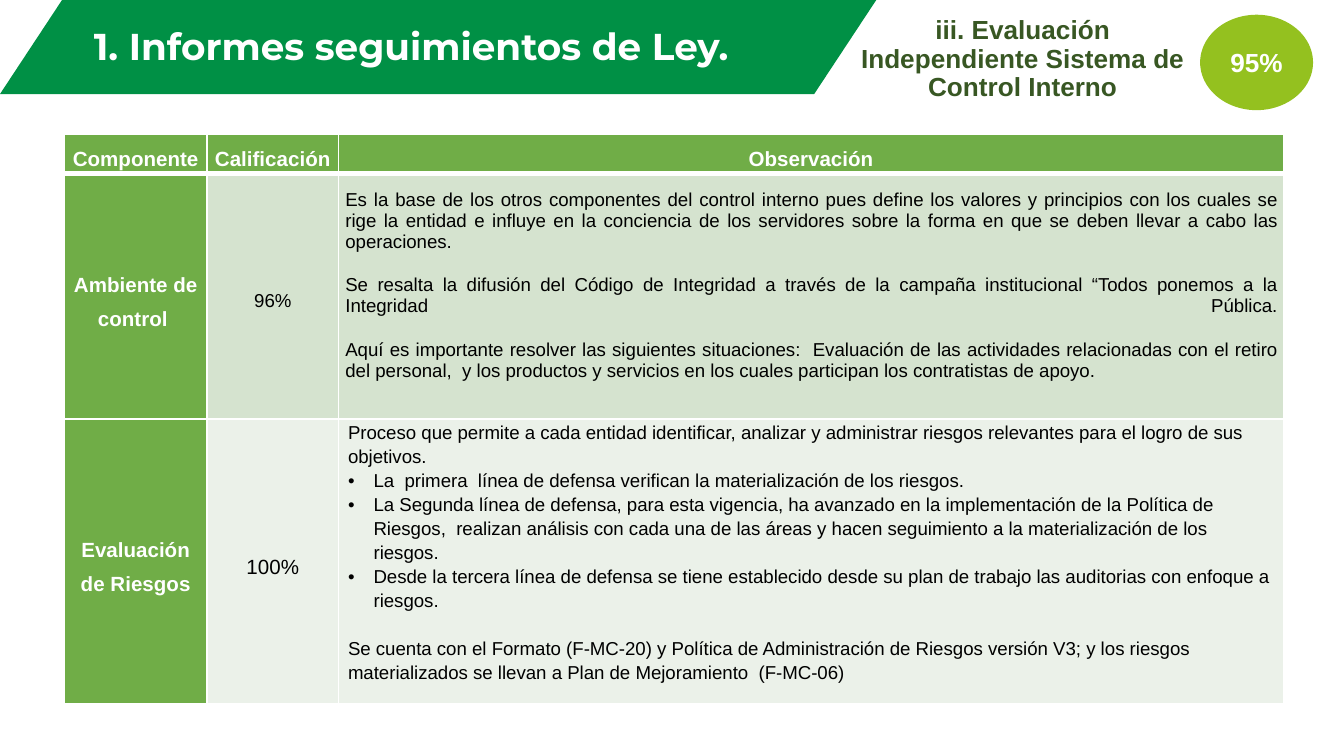
from dataclasses import dataclass, field
from typing import Any

import lxml.etree
import pptx
import pptx.dml.color
import pptx.enum.shapes
import pptx.enum.text
import pptx.oxml.ns
import pptx.util

Inches, Pt = pptx.util.Inches, pptx.util.Pt
Align, Anchor = pptx.enum.text.PP_ALIGN, pptx.enum.text.MSO_ANCHOR
ShapeType = pptx.enum.shapes.MSO_SHAPE
qn = pptx.oxml.ns.qn

WHITE, BLACK = "FFFFFF", "000000"
BANNER, LIME, DARK_GREEN = "009045", "94C11F", "385723"
HEADER, BAND_DARK, BAND_LIGHT = "70AD47", "D5E3CF", "EBF1E9"
HANGING = 0.19
SLIDE_WIDTH = 10


@dataclass
class Style:
    size: float
    color: str = BLACK
    bold: bool = False
    name: str = "Arial"


@dataclass
class Line:
    text: str
    style: Style
    bullet: bool = False
    layout: dict[str, Any] = field(default_factory=dict)


@dataclass
class Cell:
    lines: list[Line]
    fill: str
    anchor: Any = Anchor.MIDDLE
    side: float = 0.05
    bottom: float = 0


def rgb(color: str) -> pptx.dml.color.RGBColor:
    return pptx.dml.color.RGBColor.from_string(color)


def set_attributes(target: Any, values: dict[str, Any]) -> None:
    for name, value in values.items():
        setattr(target, name, value)


def write_lines(text_frame: Any, lines: list[Line]) -> None:
    for index, line in enumerate(lines):
        paragraph = text_frame.paragraphs[0] if index == 0 else text_frame.add_paragraph()
        paragraph.text = line.text
        if line.bullet:
            properties = paragraph._p.get_or_add_pPr()
            properties.set("marL", str(Inches(HANGING)))
            properties.set("indent", str(-Inches(HANGING)))
            lxml.etree.SubElement(properties, qn("a:buFont")).set("typeface", "Arial")
            lxml.etree.SubElement(properties, qn("a:buChar")).set("char", "•")
        set_attributes(paragraph, line.layout)
        style = line.style
        for run in paragraph.runs:
            set_attributes(run.font, {"size": Pt(style.size), "bold": style.bold, "name": style.name})
            run.font.color.rgb = rgb(style.color)
        # Line breaks take the size of the text around them
        for line_break in paragraph._p.findall(qn("a:br")):
            lxml.etree.SubElement(line_break, qn("a:rPr"), sz=str(int(style.size * 100)))


def add_filled_shape(slide: Any, kind: Any, box: tuple[float, ...], color: str) -> Any:
    shape = slide.shapes.add_shape(kind, *map(Inches, box))
    shape.shadow.inherit = False
    shape.fill.solid()
    shape.fill.fore_color.rgb = rgb(color)
    shape.line.fill.background()
    return shape


def add_text(slide: Any, box: tuple[float, ...], line: Line, anchor: Any) -> None:
    text_frame = slide.shapes.add_textbox(*map(Inches, box)).text_frame
    set_attributes(text_frame, {"word_wrap": True, "vertical_anchor": anchor})
    write_lines(text_frame, [line])


def add_border(cell: Any, side: str, width: float) -> None:
    border = lxml.etree.SubElement(cell._tc.get_or_add_tcPr(), qn(f"a:{side}"), w=str(Pt(width)))
    fill = lxml.etree.SubElement(border, qn("a:solidFill"))
    lxml.etree.SubElement(fill, qn("a:srgbClr"), val=WHITE)


def add_grid(slide: Any, left: float, top: float, widths: list[float],
             heights: list[float], rows: list[list[Cell]]) -> None:
    table = slide.shapes.add_table(
        len(rows), len(widths), Inches(left), Inches(top),
        Inches(sum(widths)), Inches(sum(heights))).table
    for column, width in zip(table.columns, widths):
        column.width = Inches(width)
    for row, height in zip(table.rows, heights):
        row.height = Inches(height)
    for row_index, contents in enumerate(rows):
        for column_index, content in enumerate(contents):
            cell = table.cell(row_index, column_index)
            set_attributes(cell, {
                "margin_left": Inches(content.side), "margin_right": Inches(content.side),
                "margin_top": 0, "margin_bottom": Inches(content.bottom),
                "vertical_anchor": content.anchor})
            # The rule under the header row is thicker
            add_border(cell, "lnL", 1)
            add_border(cell, "lnR", 1)
            add_border(cell, "lnT", 3 if row_index == 1 else 1)
            add_border(cell, "lnB", 3 if row_index == 0 else 1)
            cell.fill.solid()
            cell.fill.fore_color.rgb = rgb(content.fill)
            write_lines(cell.text_frame, content.lines)


CENTERED = {"alignment": Align.CENTER, "line_spacing": 1.5}
HEADLINE = {"alignment": Align.CENTER, "line_spacing": 0.9}
LOOSE = {"alignment": Align.LEFT, "line_spacing": 1.15}
BODY = Style(10)


def label(text: str) -> Cell:
    return Cell([Line(text, Style(11, WHITE, True), layout=CENTERED)], HEADER)


def score(text: str, size: float, fill: str) -> Cell:
    return Cell([Line(text, Style(size), layout=CENTERED)], fill)


ENVIRONMENT = "\v\v".join([
    "Es la base de los otros componentes del control interno pues define los valores y principios "
    "con los cuales se rige la entidad e influye en la conciencia de los servidores sobre la forma "
    "en que se deben llevar a cabo las operaciones.",
    "Se resalta la difusión del Código de Integridad a través de la campaña institucional “Todos "
    "ponemos a la Integridad Pública.",
    "Aquí es importante resolver las siguientes situaciones:  Evaluación de las actividades "
    "relacionadas con el retiro del personal,  y los productos y servicios en los cuales participan "
    "los contratistas de apoyo.",
])
RISK_INTRO = ("Proceso que permite a cada entidad identificar, analizar y administrar riesgos "
              "relevantes para el logro de sus objetivos.")
RISK_BULLETS = [
    "La  primera  línea de defensa verifican la materialización de los riesgos.",
    "La Segunda línea de defensa, para esta vigencia, ha avanzado en la implementación de la "
    "Política de Riesgos,  realizan análisis con cada una de las áreas y hacen seguimiento a la "
    "materialización de los riesgos.",
    "Desde la tercera línea de defensa se tiene establecido desde su plan de trabajo las auditorias "
    "con enfoque a riesgos.",
]
RISK_CLOSING = ("Se cuenta con el Formato (F-MC-20) y Política de Administración de Riesgos versión "
                "V3; y los riesgos materializados se llevan a Plan de Mejoramiento  (F-MC-06)")

ROWS = [
    [label(text) for text in ("Componente", "Calificación", "Observación")],
    [label("Ambiente de control "), score("96%", 10, BAND_DARK),
     Cell([Line(ENVIRONMENT, BODY, layout={"alignment": Align.JUSTIFY})], BAND_DARK, bottom=0.16)],
    [label("Evaluación de Riesgos"), score("100%", 11, BAND_LIGHT),
     Cell([Line(RISK_INTRO, BODY, layout=LOOSE),
           *[Line(text, BODY, True, LOOSE) for text in RISK_BULLETS],
           Line(RISK_CLOSING, BODY, layout={**LOOSE, "space_before": Pt(13)})],
          BAND_LIGHT, Anchor.TOP, side=0.07)],
]


def main() -> None:
    presentation = pptx.Presentation()
    set_attributes(presentation, {"slide_width": Inches(SLIDE_WIDTH),
                                  "slide_height": Inches(SLIDE_WIDTH * 9 / 16)})
    slide = presentation.slides.add_slide(presentation.slide_layouts[6])

    # Title banner
    banner = add_filled_shape(slide, ShapeType.PARALLELOGRAM, (0, 0, 6.52, 0.7), BANNER)
    banner.adjustments[0] = 0.66
    add_text(slide, (0.16, 0.13, 5.88, 0.43),
             Line("1. Informes seguimientos de Ley. ", Style(20, WHITE, True, "Montserrat"),
                  layout=HEADLINE), Anchor.BOTTOM)

    # Component table
    add_grid(slide, 0.48, 1, [1.06, 0.98, 7.03], [0.29, 1.83, 2.12], ROWS)

    # Section heading and overall score
    add_text(slide, (6.28, 0.08, 2.66, 0.74),
             Line("iii. Evaluación Independiente Sistema de Control Interno",
                  Style(14, DARK_GREEN, True), layout=HEADLINE), Anchor.TOP)
    badge = add_filled_shape(slide, ShapeType.FLOWCHART_CONNECTOR, (8.93, 0.11, 0.84, 0.71), LIME)
    badge.text_frame.vertical_anchor = Anchor.MIDDLE
    write_lines(badge.text_frame, [Line("95%", Style(14, WHITE, True),
                                        layout={"alignment": Align.CENTER})])

    presentation.save("out.pptx")


if __name__ == "__main__":
    main()
